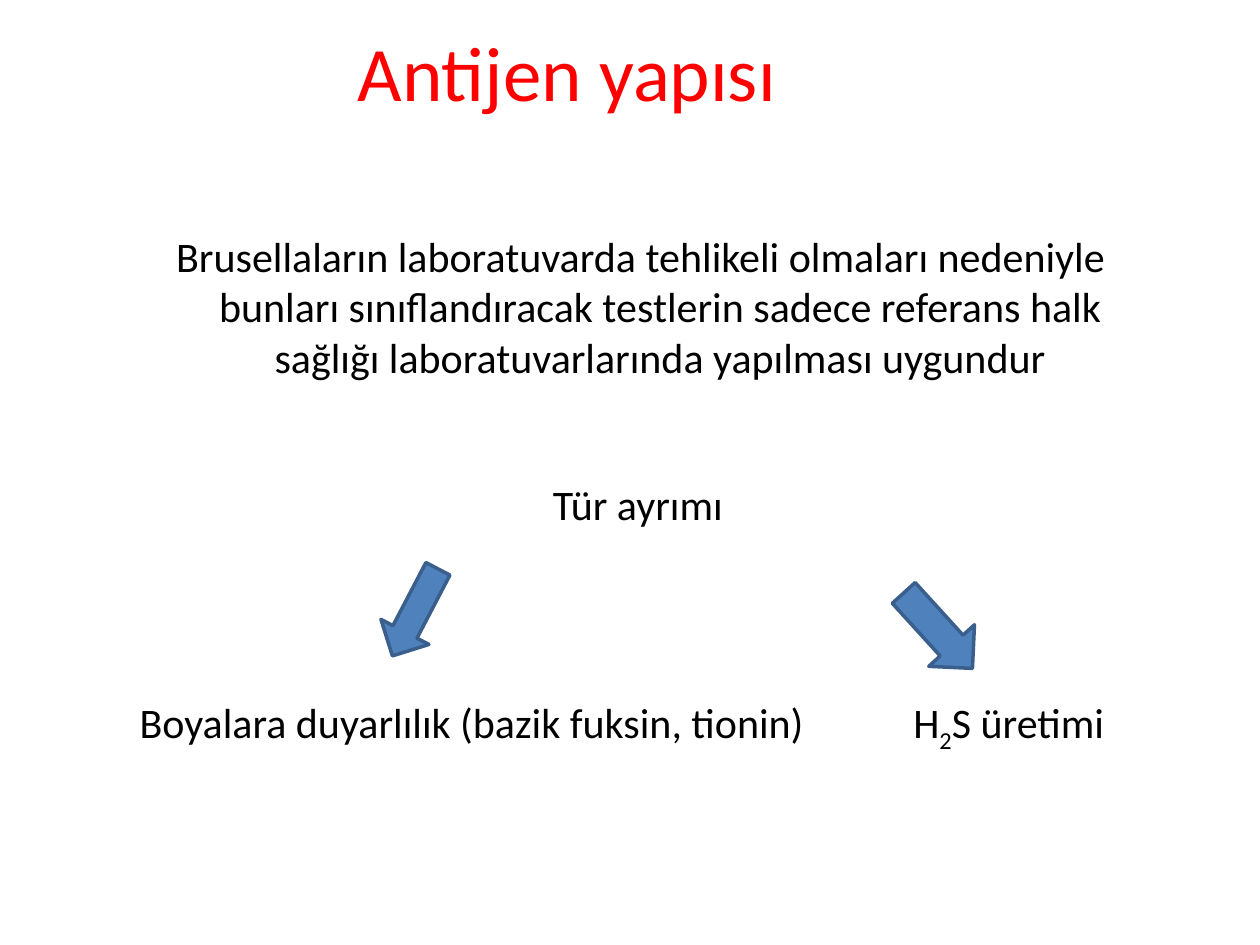
from pptx import Presentation, util as u
from pptx.dml.color import RGBColor
from pptx.enum import shapes, text

THEME = {
    "font": "Calibri", "title_size": 44, "body_size": 24,
    "title": "FF0000", "ink": "000000", "arrow": "4F81BD", "outline": "3A5F8C",
}

# Content: boxes are left, top, width, height in inches
TITLE = ("Antijen yapısı\v", (0, 0.3, 9, 1.25))  # the break lifts the title
# runs (text, is subscript), box, centred, hanging indent
BODY = [
    ([("Brusellaların laboratuvarda tehlikeli olmaları nedeniyle bunları "
       "sınıflandıracak testlerin sadece referans halk sağlığı "
       "laboratuvarlarında yapılması uygundur", False)],
     (0.67, 1.78, 8.33, 1.31), True, True),
    ([("Boyalara duyarlılık (bazik fuksin, tionin)", False)],
     (0.51, 5.48, 6.22, 0.51), False, True),
    ([("H", False), ("2", True), ("S üretimi", False)],
     (6.65, 5.48, 3.35, 0.51), False, True),
    ([("Tür ayrımı", False)], (4.29, 3.75, 2.5, 0.51), False, False),
]
ARROWS = [((3.08, 4.47, 0.43, 0.78), 27.6), ((7.2, 4.6, 0.49, 0.81), 317.7)]


def color(name):
    return RGBColor.from_string(THEME[name])


def inches(box):
    return [u.Inches(v) for v in box]


def add_box(s, box, size, ink, centred):
    """Add a wrapping text box and return its frame and styled paragraph."""
    tf = s.shapes.add_textbox(*inches(box)).text_frame
    tf.word_wrap = True
    p = tf.paragraphs[0]
    p.alignment = text.PP_ALIGN.CENTER if centred else text.PP_ALIGN.LEFT
    p.font.name, p.font.size = THEME["font"], u.Pt(THEME[size])
    p.font.color.rgb = color(ink)
    return tf, p


def add_body(s, runs, box, centred, hanging):
    tf, p = add_box(s, box, "body_size", "ink", centred)
    if hanging:
        pPr = p._p.get_or_add_pPr()
        pPr.set("marL", str(u.Inches(0.81)))
        pPr.set("indent", str(u.Inches(-0.31)))
    for words, subscript in runs:
        r = p.add_run()
        r.text = words
        r.font.name, r.font.size = THEME["font"], u.Pt(THEME["body_size"])
        r.font.color.rgb = color("ink")
        if subscript:
            r._r.get_or_add_rPr().set("baseline", "-25000")


def add_arrow(s, box, angle):
    sp = s.shapes.add_shape(shapes.MSO_SHAPE.DOWN_ARROW, *inches(box))
    sp.rotation = angle
    sp.shadow.inherit = False
    sp.fill.solid()
    sp.fill.fore_color.rgb = color("arrow")
    sp.line.color.rgb = color("outline")
    sp.line.width = u.Pt(2)


def main():
    prs = Presentation()
    prs.slide_width, prs.slide_height = u.Inches(10), u.Inches(7.5)
    s = prs.slides.add_slide(prs.slide_layouts[6])

    # Title
    words, box = TITLE
    tf, p = add_box(s, box, "title_size", "title", True)
    tf.vertical_anchor = text.MSO_ANCHOR.MIDDLE
    p.text = words
    for r in p.runs:
        r.font.name, r.font.size = THEME["font"], u.Pt(THEME["title_size"])
        r.font.color.rgb = color("title")

    # Statement and the two branches of species typing
    for item in BODY:
        add_body(s, *item)
    for box, angle in ARROWS:
        add_arrow(s, box, angle)

    prs.save("out.pptx")


if __name__ == "__main__":
    main()
